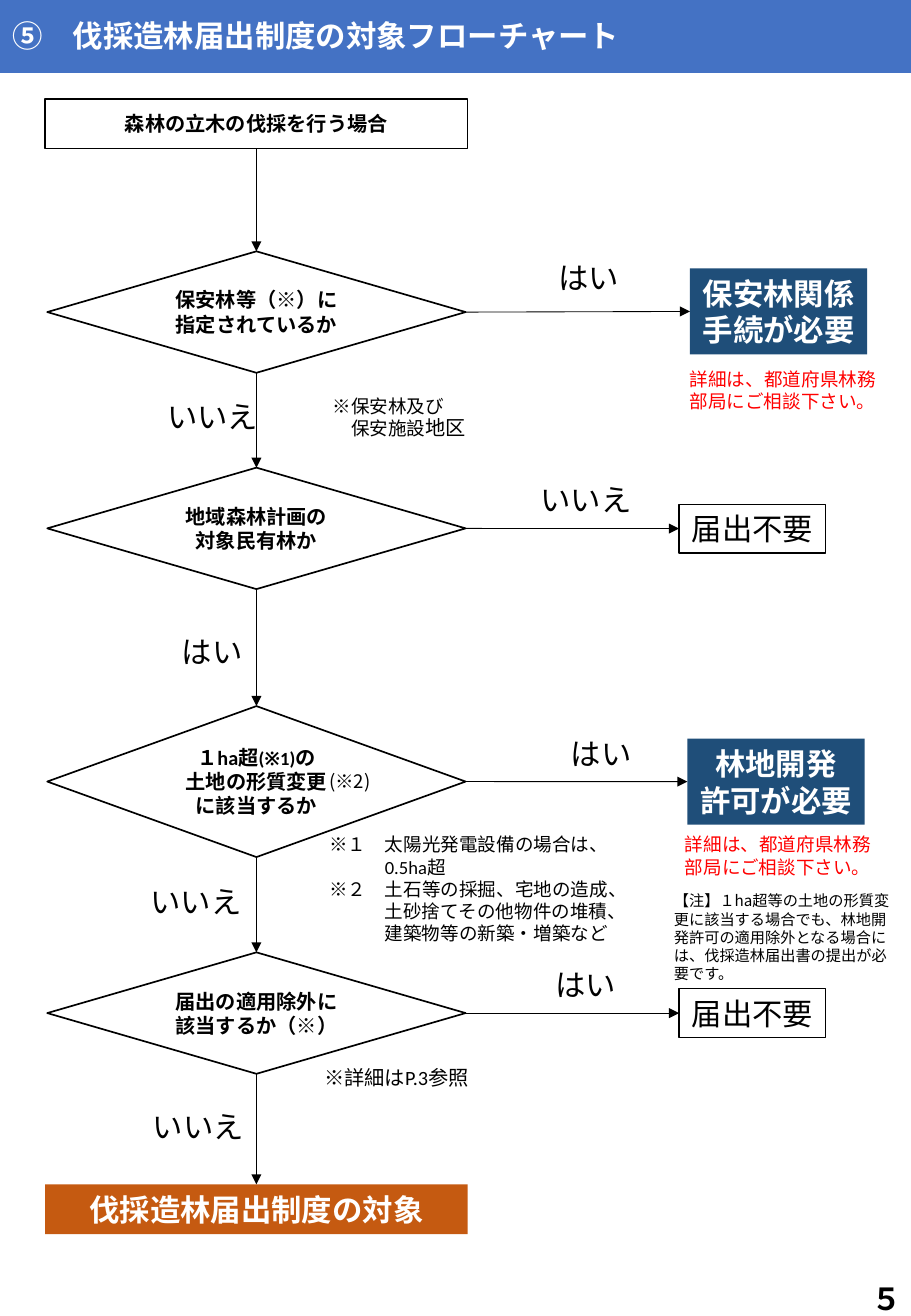
from lxml import etree
from pptx import Presentation
from pptx.dml.color import RGBColor
from pptx.enum import shapes, text
from pptx.oxml import ns
from pptx.util import Pt

JP = "Noto Sans CJK JP"
LATIN = "Calibri"
BLACK, WHITE, RED = "000000", "FFFFFF", "FF0000"
BLUE, NAVY, ORANGE = "4472C4", "1F4E79", "C55A11"
LEFT, CENTER = text.PP_ALIGN.LEFT, text.PP_ALIGN.CENTER
MIDDLE, TOP = text.MSO_ANCHOR.MIDDLE, text.MSO_ANCHOR.TOP
RECT = shapes.MSO_SHAPE.RECTANGLE
DIAMOND = shapes.MSO_SHAPE.DIAMOND
SITE_TOP, SITE_LEFT, SITE_BOTTOM, SITE_RIGHT = range(4)

# Each step: top, height, question, label below, label at right, outcome.
# A label is text, left, top; an outcome is lines, left, top, is a procedure.
STEPS = [
    (149, 72, ["保安林等（※）に", "指定されているか"],
     ("いいえ", 92, 232.5), ("はい", 324, 150),
     (["保安林関係", "手続が必要"], 409, 159.1, True)),
    (277.2, 72, ["地域森林計画の", "対象民有林か"],
     ("はい", 100.8, 371.5), ("いいえ", 313.2, 281.5),
     (["届出不要"], 402.5, 298.8, False)),
    (418.5, 89.5,
     [["１ha超", ("(※1)", 11), "の"], "土地の形質変更", "に該当するか"],
     ("いいえ", 82, 520), ("はい", 331.2, 432),
     (["林地開発", "許可が必要"], 407.5, 437.8, True)),
    (564.5, 72, ["届出の適用除外に", "該当するか（※）"],
     ("いいえ", 83.5, 653), ("はい", 322, 569),
     (["届出不要"], 402.5, 586, False)),
]


def rgb(hex_color):
    return RGBColor.from_string(hex_color)


def write(tf, lines, size=12, font=LATIN, color=BLACK, bold=False,
          align=LEFT, anchor=TOP, wrap=True, indents=()):
    """Fill a frame; a line is a string or a list of strings and (string, size)."""
    tf.word_wrap = wrap
    tf.auto_size = text.MSO_AUTO_SIZE.NONE
    tf.vertical_anchor = anchor
    for i, line in enumerate(lines):
        p = tf.paragraphs[0] if i == 0 else tf.add_paragraph()
        p.alignment = align
        p.line_spacing = Pt(size * 1.2)
        if i < len(indents):
            p._p.get_or_add_pPr().set("marL", str(Pt(indents[i])))
        for part in [line] if isinstance(line, str) else line:
            words, points = (part, size) if isinstance(part, str) else part
            r = p.add_run()
            r.text = words
            r.font.size = Pt(points)
            r.font.bold = bold
            r.font.name = font
            r.font.color.rgb = rgb(color)
            ea = etree.SubElement(r._r.get_or_add_rPr(), ns.qn("a:ea"))
            ea.set("typeface", JP)


def place(sp, left, top, width, height):
    sp.left, sp.top = Pt(left), Pt(top)
    sp.width, sp.height = Pt(width), Pt(height)


def add_title(slide, words):
    sp = slide.shapes.title
    place(sp, 0, -1.4, 540, 44.6)
    sp.fill.solid()
    sp.fill.fore_color.rgb = rgb(BLUE)
    write(sp.text_frame, [words], size=18, font=JP, color=WHITE, bold=True,
          anchor=MIDDLE)


def add_box(slide, kind, bounds, lines, fill=WHITE, line=None, **fmt):
    sp = slide.shapes.add_shape(kind, *map(Pt, bounds))
    sp.shadow.inherit = False
    sp.fill.solid()
    sp.fill.fore_color.rgb = rgb(fill)
    if line:
        sp.line.color.rgb = rgb(BLACK)
        sp.line.width = Pt(line)
    else:
        sp.line.fill.background()
    write(sp.text_frame, lines, align=CENTER, anchor=MIDDLE, **fmt)
    return sp


def add_text(slide, bounds, lines, **fmt):
    sp = slide.shapes.add_textbox(*map(Pt, bounds))
    write(sp.text_frame, lines, **fmt)


def add_label(slide, words, left, top):
    add_text(slide, (left, top, 18 * len(words) + 16, 29), [words], size=18)


def add_outcome(slide, lines, left, top, is_procedure):
    if is_procedure:
        return add_box(slide, RECT, (left, top, 105, 51), lines, fill=NAVY,
                       size=18, color=WHITE, bold=True, wrap=False)
    return add_box(slide, RECT, (left, top, 87, 29), lines, line=0.75,
                   size=18, wrap=False)


def add_arrow(slide, start, start_site, end, end_site):
    c = slide.shapes.add_connector(shapes.MSO_CONNECTOR.STRAIGHT, 0, 0, 0, 0)
    c.begin_connect(start, start_site)
    c.end_connect(end, end_site)
    c.line.color.rgb = rgb(BLACK)
    c.line.width = Pt(0.5)
    tail = etree.SubElement(c.line._get_or_add_ln(), ns.qn("a:tailEnd"))
    tail.set("type", "triangle")
    etree.SubElement(c._element.spPr, ns.qn("a:effectLst"))


def add_flow(slide):
    previous = add_box(slide, RECT, (26.8, 58.5, 250.4, 29.5),
                       ["森林の立木の伐採を行う場合"], line=1, bold=True)
    for top, height, question, below, beside, outcome in STEPS:
        step = add_box(slide, DIAMOND, (28, top, 248, height), question,
                       line=1, bold=True, wrap=False)
        result = add_outcome(slide, *outcome)
        add_arrow(slide, previous, SITE_BOTTOM, step, SITE_TOP)
        add_arrow(slide, step, SITE_RIGHT, result, SITE_LEFT)
        add_label(slide, *below)
        add_label(slide, *beside)
        previous = step
    target = add_box(slide, RECT, (26.8, 702, 250.4, 29.5),
                     ["伐採造林届出制度の対象"], fill=ORANGE,
                     size=18, color=WHITE, bold=True)
    add_arrow(slide, previous, SITE_BOTTOM, target, SITE_TOP)


def add_notes(slide):
    add_text(slide, (190, 230.4, 102, 35),
             ["※保安林及び", ["保安施設", ("地区", 12)]],
             size=11, indents=(0, 11))
    add_text(slide, (185, 628, 101.5, 36), ["※詳細はP.3参照"])
    add_text(slide, (188, 490.3, 198, 74),
             ["※１　太陽光発電設備の場合は、", "0.5ha超",
              "※２　土石等の採掘、宅地の造成、",
              "土砂捨てその他物件の堆積、", "建築物等の新築・増築など"],
             size=11, indents=(0, 33, 0, 33, 33))
    add_text(slide, (188, 453, 45, 21), ["(※2)"], size=11, font=JP)
    for left, top in ((401.8, 214.6), (398.9, 490.3)):
        add_text(slide, (left, top, 126, 34),
                 ["詳細は、都道府県林務部局にご相談下さい。"],
                 size=11, font=JP, color=RED)
    add_text(slide, (392.4, 525, 143.3, 61),
             ["【注】１ha超等の土地の形質変更に該当する場合でも、"
              "林地開発許可の適用除外となる場合には、"
              "伐採造林届出書の提出が必要です。"], size=9, font=JP)


def main():
    prs = Presentation()
    prs.slide_width, prs.slide_height = Pt(540), Pt(780)
    slide = prs.slides.add_slide(prs.slide_layouts[5])
    add_title(slide, "⑤　伐採造林届出制度の対象フローチャート")
    add_flow(slide)
    add_notes(slide)
    add_text(slide, (509.8, 755.3, 33, 24.5), ["５"], size=18, font=JP,
             bold=True)
    prs.save("out.pptx")


if __name__ == "__main__":
    main()
